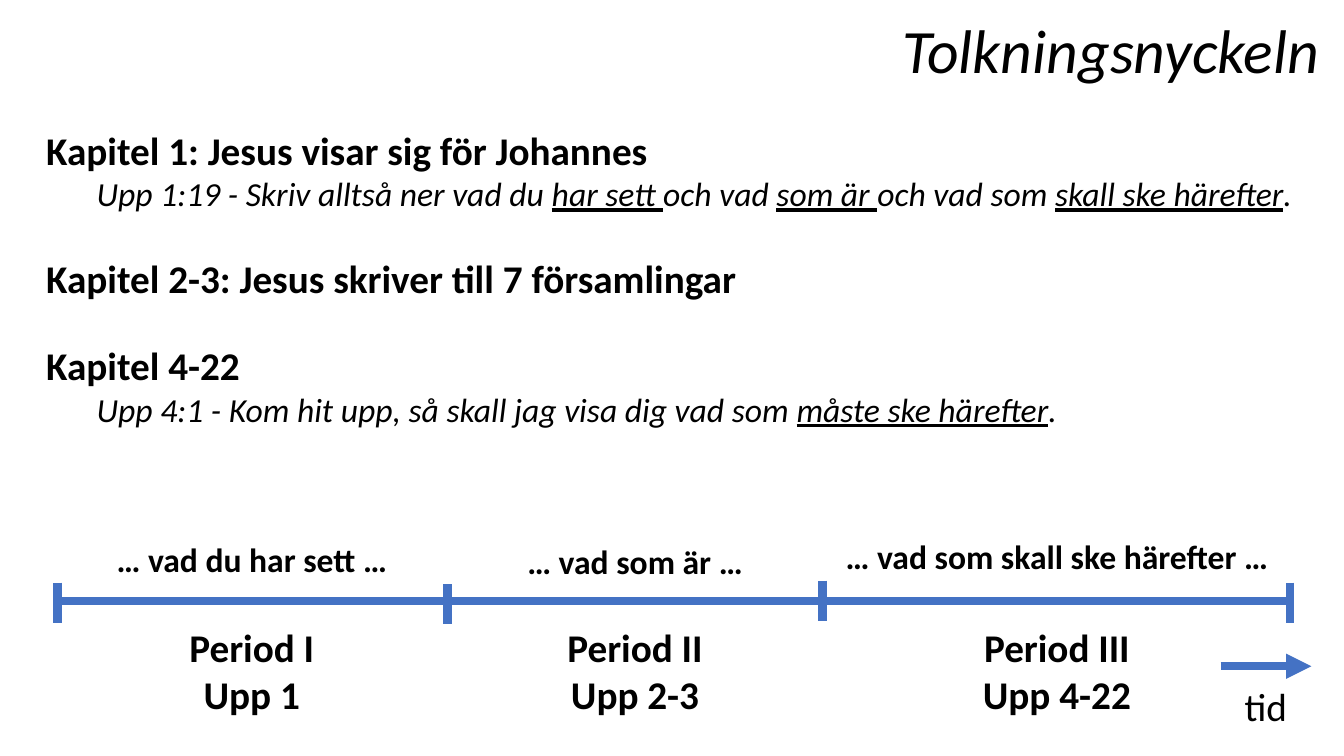
from pptx import Presentation
from pptx.dml.color import RGBColor
from pptx.enum.shapes import MSO_CONNECTOR as Connector, MSO_SHAPE as Shape
from pptx.enum.text import MSO_ANCHOR as Anchor, MSO_AUTO_SIZE as AutoSize, PP_ALIGN as Align
from pptx.oxml.ns import qn
from pptx.util import Pt
from lxml.etree import SubElement

BLACK, WHITE, BLUE = "000000", "FFFFFF", "4472C4"


def style(para, size, align=Align.LEFT, bold=False, italic=False):
    """Set the alignment and font of a whole paragraph."""
    para.alignment = align
    font = para.font
    font.name, font.size, font.bold, font.italic = "Calibri", Pt(size), bold, italic
    font.color.rgb = RGBColor.from_string(BLACK)


def add_line(x1, y1, x2, y2):
    """Draw a thick blue line without shadow and return its XML line element."""
    line = page.shapes.add_connector(Connector.STRAIGHT, Pt(x1), Pt(y1), Pt(x2), Pt(y2))
    line.line.width = Pt(6)
    line.line.color.rgb = RGBColor.from_string(BLUE)
    properties = line._element.spPr
    SubElement(properties, qn("a:effectLst"))
    return properties.find(qn("a:ln"))


deck = Presentation()
deck.slide_width, deck.slide_height = Pt(960), Pt(540)
page = deck.slides.add_slide(deck.slide_layouts[5])

# Title
title = page.shapes.title
title.left, title.top, title.width, title.height = Pt(626.4), Pt(14.4), Pt(323.3), Pt(48.2)
title.text_frame.text = "Tolkningsnyckeln"
title.text_frame.auto_size = AutoSize.NONE
title.text_frame.vertical_anchor = Anchor.MIDDLE
title.text_frame.paragraphs[0].line_spacing = 0.9
style(title.text_frame.paragraphs[0], 44, Align.RIGHT, italic=True)

# Chapters: heading and verse, where every second part of the verse is underlined
chapters = [
    ("Kapitel 1: Jesus visar sig för Johannes",
     ["Upp 1:19 - Skriv alltså ner vad du ", "har sett ", "och vad ", "som är ",
      "och vad som ", "skall ske härefter", "."]),
    ("Kapitel 2-3: Jesus skriver till 7 församlingar", []),
    ("Kapitel 4-22",
     ["Upp 4:1 - Kom hit upp, så skall jag visa dig vad som ", "måste ske härefter", "."]),
]
panel = page.shapes.add_shape(Shape.RECTANGLE, Pt(25.9), Pt(86.4), Pt(907.9), Pt(254.2))
panel.shadow.inherit = False
panel.fill.solid()
panel.fill.fore_color.rgb = RGBColor.from_string(WHITE)
panel.line.fill.background()
frame = panel.text_frame
frame.word_wrap = True
frame.vertical_anchor = Anchor.TOP
for number, (heading, verse) in enumerate(chapters):
    para = frame.add_paragraph() if number else frame.paragraphs[0]
    para.text = heading
    para.space_before = Pt(29 if number else 0)
    style(para, 28, bold=True)
    if verse:
        para = frame.add_paragraph()
        para.level = 1
        para._p.get_or_add_pPr().set("marL", str(Pt(36)))
        style(para, 24, italic=True)
        for index, part in enumerate(verse):
            span = para.add_run()
            span.text = part
            span.font.underline = index % 2 == 1

# Timeline: left, width, label top, label, period, reference
periods = [
    (40, 279.7, 381.6, "… vad du har sett …", "Period I", "Upp 1"),
    (319.7, 267.8, 383, "… vad som är …", "Period II", "Upp 2-3"),
    (587.5, 334.8, 379.4, "… vad som skall ske härefter …", "Period III", "Upp 4-22"),
]
for left, width, label_top, label, period, reference in periods:
    for top, height, size, lines in ((label_top, 36, 24, [label]),
                                     (441.4, 74.9, 28, [period, reference])):
        box = page.shapes.add_textbox(Pt(left), Pt(top), Pt(width), Pt(height))
        box.text_frame.word_wrap = True
        box.text_frame.text = "\n".join(lines)
        for para in box.text_frame.paragraphs:
            style(para, size, Align.CENTER, bold=True)

add_line(41, 429.1, 922.3, 429.1)
for x, top in ((41, 416.2), (319.7, 417.4), (587.5, 414.7), (921.6, 416.2)):
    add_line(x, top, x, top + 28.6)

# Direction of time
arrow = add_line(871.9, 475.9, 936.7, 475.9)
SubElement(arrow, qn("a:tailEnd"), type="triangle")
box = page.shapes.add_textbox(Pt(882), Pt(483.8), Pt(45.4), Pt(41))
box.text_frame.word_wrap = False
box.text_frame.text = "tid"
style(box.text_frame.paragraphs[0], 28)

deck.save("out.pptx")
